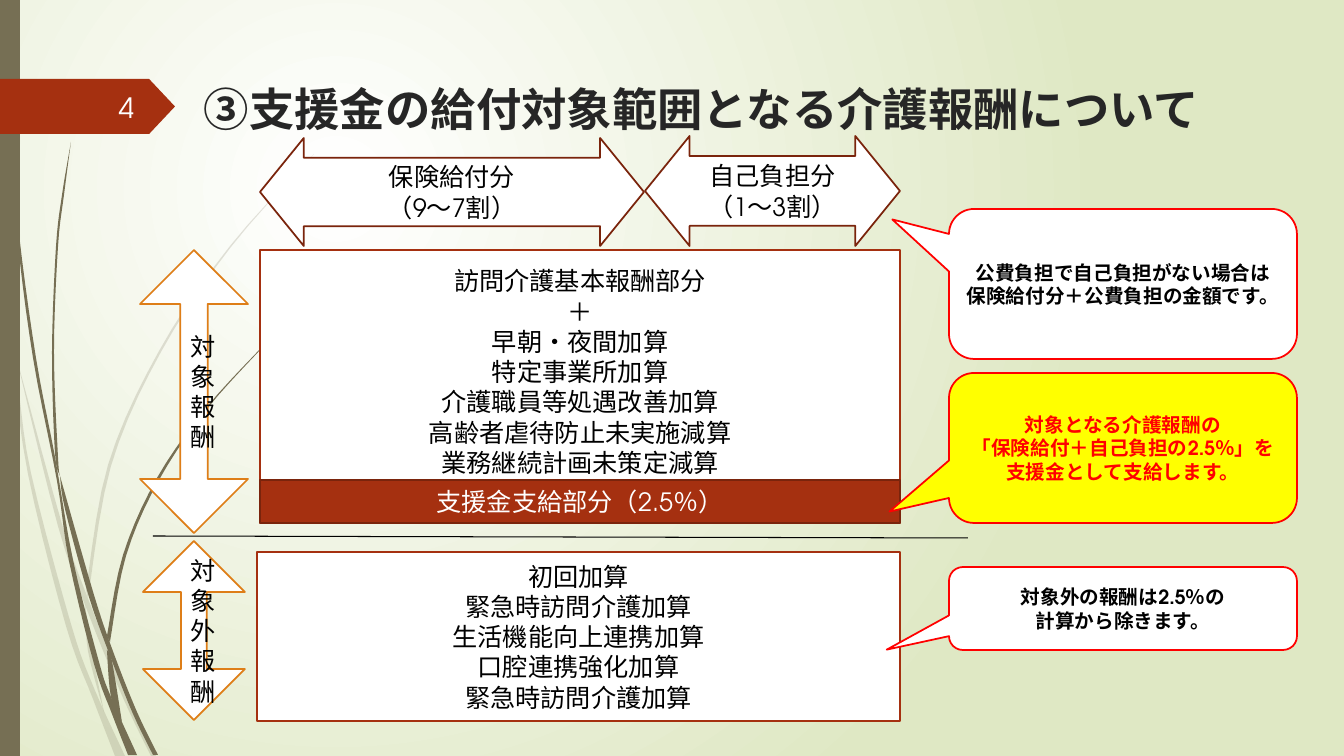
from lxml import etree
from pptx import Presentation
from pptx.dml.color import RGBColor
from pptx.enum.shapes import MSO_CONNECTOR, MSO_SHAPE
from pptx.enum.text import MSO_ANCHOR, PP_ALIGN
from pptx.oxml.ns import qn
from pptx.util import Pt

PX = 914400 / 100.8
FONT = "TeX Gyre Adventor"
RECT, TAG = MSO_SHAPE.RECTANGLE, MSO_SHAPE.PENTAGON
TALL, WIDE = MSO_SHAPE.UP_DOWN_ARROW, MSO_SHAPE.LEFT_RIGHT_ARROW
CALL = MSO_SHAPE.ROUNDED_RECTANGULAR_CALLOUT
LEFT, MID, RIGHT = PP_ALIGN.LEFT, PP_ALIGN.CENTER, PP_ALIGN.RIGHT
MIDDLE = MSO_ANCHOR.MIDDLE

WHITE = RGBColor(0xFF, 0xFF, 0xFF)
BLACK = RGBColor(0x00, 0x00, 0x00)
INK = RGBColor(0x26, 0x26, 0x26)
PALE = RGBColor(0xDF, 0xE8, 0xC4)
OLIVE = RGBColor(0x76, 0x6F, 0x54)
RUST = RGBColor(0xA5, 0x30, 0x10)
BROWN = RGBColor(0x7A, 0x24, 0x0C)
ORANGE = RGBColor(0xDE, 0x7E, 0x18)
RED = RGBColor(0xFF, 0x00, 0x00)
YELLOW = RGBColor(0xFF, 0xFF, 0x00)


def write(shape, lines, size, color, bold=False, align=MID):
    frame = shape.text_frame
    frame.word_wrap = True
    frame.vertical_anchor = MIDDLE
    frame.text = "\n".join(lines)
    for para in frame.paragraphs:
        para.alignment = align
        para.font.name = FONT
        para.font.size = Pt(size)
        para.font.bold = bold
        para.font.color.rgb = color


def smooth(dots):
    """Points in EMU on a curve through all the dots."""
    ends = [dots[0], *dots, dots[-1]]
    out = []
    for a, b, c, d in zip(ends, ends[1:], ends[2:], ends[3:]):
        for t in (0, 0.2, 0.4, 0.6, 0.8):
            out.append(tuple(
                PX * (q + t * (r - p) / 2
                      + t * t * (2 * p - 5 * q + 4 * r - s) / 2
                      + t ** 3 * (3 * q - p - 3 * r + s) / 2)
                for p, q, r, s in zip(a, b, c, d)))
    return out + [tuple(PX * n for n in dots[-1])]


deck = Presentation()
deck.slide_width, deck.slide_height = round(1344 * PX), round(756 * PX)
slide = deck.slides.add_slide(deck.slide_layouts[6])
shapes = slide.shapes

# Background: round gradient
fill = slide.background.fill
fill.gradient()
for stop, color in zip(fill.gradient_stops, (WHITE, PALE)):
    stop.color.rgb = color
grad = next(slide.element.iter(qn("a:gradFill")))
grad.remove(grad.find(qn("a:lin")))
ring = etree.SubElement(grad, qn("a:path"), path="circle")
etree.SubElement(ring, qn("a:fillToRect"), l="50000", t="50000", r="100000", b="100000")

# Grass blades: left edge, right edge, whether faint
blades = [
    ([(0, 301), (10, 347), (28, 474), (66, 626), (93, 699), (115, 756)],
     [(0, 284), (17, 379), (31, 473), (71, 624), (94, 688), (125, 756)], True),
    ([(14, 348), (58, 526), (89, 615), (124, 700), (151, 756)],
     [(14, 348), (62, 524), (89, 601), (128, 698), (156, 756)], True),
    ([(85, 604), (88, 651), (104, 712)],
     [(85, 604), (92, 651), (104, 712)], True),
    ([(86, 590), (108, 465), (159, 351), (230, 246), (314, 154)],
     [(88, 598), (111, 466), (161, 352), (231, 247), (314, 154)], True),
    ([(3, 0), (7, 111), (17, 235), (33, 358), (57, 481), (69, 561), (94, 664),
      (112, 714), (128, 755)],
     [(4, 0), (8, 110), (19, 234), (36, 358), (55, 457), (73, 560), (99, 662),
      (111, 697), (137, 755)], False),
    ([(60, 476), (65, 509), (89, 597), (112, 661), (133, 714), (153, 755)],
     [(60, 476), (94, 595), (114, 654), (137, 712), (158, 755)], False),
    ([(107, 650), (111, 697), (122, 722)],
     [(107, 650), (112, 661), (122, 722)], False),
    ([(107, 636), (123, 555), (157, 478), (206, 408), (262, 347)],
     [(110, 642), (126, 556), (159, 480), (207, 409), (263, 347)], False),
    ([(71, 142), (62, 195), (56, 247), (52, 352), (55, 453), (60, 476)],
     [(71, 142), (64, 195), (58, 247), (54, 352), (58, 457), (60, 476)], False),
]
for left, right, faint in blades:
    edge = smooth(left) + smooth(right)[::-1]
    path = shapes.build_freeform(*edge[0])
    path.add_line_segments(edge[1:], close=True)
    blade = path.convert_to_shape()
    blade.shadow.inherit = False
    blade.fill.solid()
    blade.fill.fore_color.rgb = OLIVE
    blade.line.fill.background()
    if faint:
        tint = blade.fill._xPr.find(qn("a:solidFill"))[0]
        etree.SubElement(tint, qn("a:alpha"), val="20000")

# Dividing line
rule = shapes.add_connector(MSO_CONNECTOR.STRAIGHT,
                            *(round(n * PX) for n in (153, 536, 968, 538)))
rule.line.color.rgb = BLACK
rule.line.width = Pt(0.75)
etree.SubElement(rule._element.spPr, qn("a:effectLst"))

# Panels, arrows and callouts: kind, box, adjustments, fill, line, lines, size, colour
parts = [
    (RECT, (0, 0, 20, 756), (), OLIVE, None, (), 18, BLACK),
    (TAG, (0, 79, 175, 55), (0.47,), RUST, None, (), 18, BLACK),
    (RECT, (260, 250, 640, 273), (), WHITE, RUST,
     ("訪問介護基本報酬部分", "＋", "早朝・夜間加算", "特定事業所加算",
      "介護職員等処遇改善加算", "高齢者虐待防止未実施減算",
      "業務継続計画未策定減算"), 18, BLACK),
    (RECT, (257, 552, 643, 169), (), WHITE, RUST,
     ("初回加算", "緊急時訪問介護加算", "生活機能向上連携加算",
      "口腔連携強化加算", "緊急時訪問介護加算"), 18, BLACK),
    (TALL, (140, 250, 108, 283), (0.608, 0.253), WHITE, ORANGE,
     ("対象報酬",), 18, BLACK),
    (TALL, (143, 541, 102, 179), (0.608, 0.253), WHITE, ORANGE,
     ("対象外報酬",), 18, BLACK),
    (WIDE, (260, 138, 384, 108), (0.634, 0.406), WHITE, BROWN,
     ("保険給付分", "（9～7割）"), 18, BLACK),
    (WIDE, (645, 136, 255, 110), (0.634, 0.406), WHITE, BROWN,
     ("自己負担分", "（1～3割）"), 18, BLACK),
    (RECT, (260, 480, 640, 43), (), RUST, BROWN,
     ("支援金支給部分（2.5％）",), 18, WHITE),
    (CALL, (949, 373, 348, 150), (-0.671, 0.424, 0.167), YELLOW, RED,
     ("対象となる介護報酬の", "「保険給付＋自己負担の2.5％」を",
      "支援金として支給します。"), 14, RED),
    (CALL, (949, 209, 348, 150), (-0.663, -0.43, 0.167), WHITE, RED,
     ("公費負担で自己負担がない場合は保険給付分＋公費負担の金額です。",), 14, BLACK),
    (CALL, (949, 567, 348, 83), (-0.679, 0.496, 0.167), WHITE, RED,
     ("対象外の報酬は2.5％の", "計算から除きます。"), 14, BLACK),
]
for kind, box, bends, paint, edge, lines, size, color in parts:
    part = shapes.add_shape(kind, *(round(n * PX) for n in box))
    part.shadow.inherit = False
    for i, bend in enumerate(bends):
        part.adjustments[i] = bend
    part.fill.solid()
    part.fill.fore_color.rgb = paint
    if edge is None:
        part.line.fill.background()
    else:
        part.line.color.rgb = edge
        part.line.width = Pt(1.25)
    if lines:
        write(part, lines, size, color, bold=kind == CALL)
    if len(lines) == 7:  # keep clear of the red band
        part.text_frame.margin_bottom = round(35 * PX)

# Title and page number
for box, text, size, color, bold, align in [
    ((194, 81, 1083, 55), "③支援金の給付対象範囲となる介護報酬について",
     32.4, INK, True, LEFT),
    ((58, 87, 86, 40), "4", 20, WHITE, False, RIGHT),
]:
    label = shapes.add_textbox(*(round(n * PX) for n in box))
    write(label, [text], size, color, bold, align)

deck.save("out.pptx")
